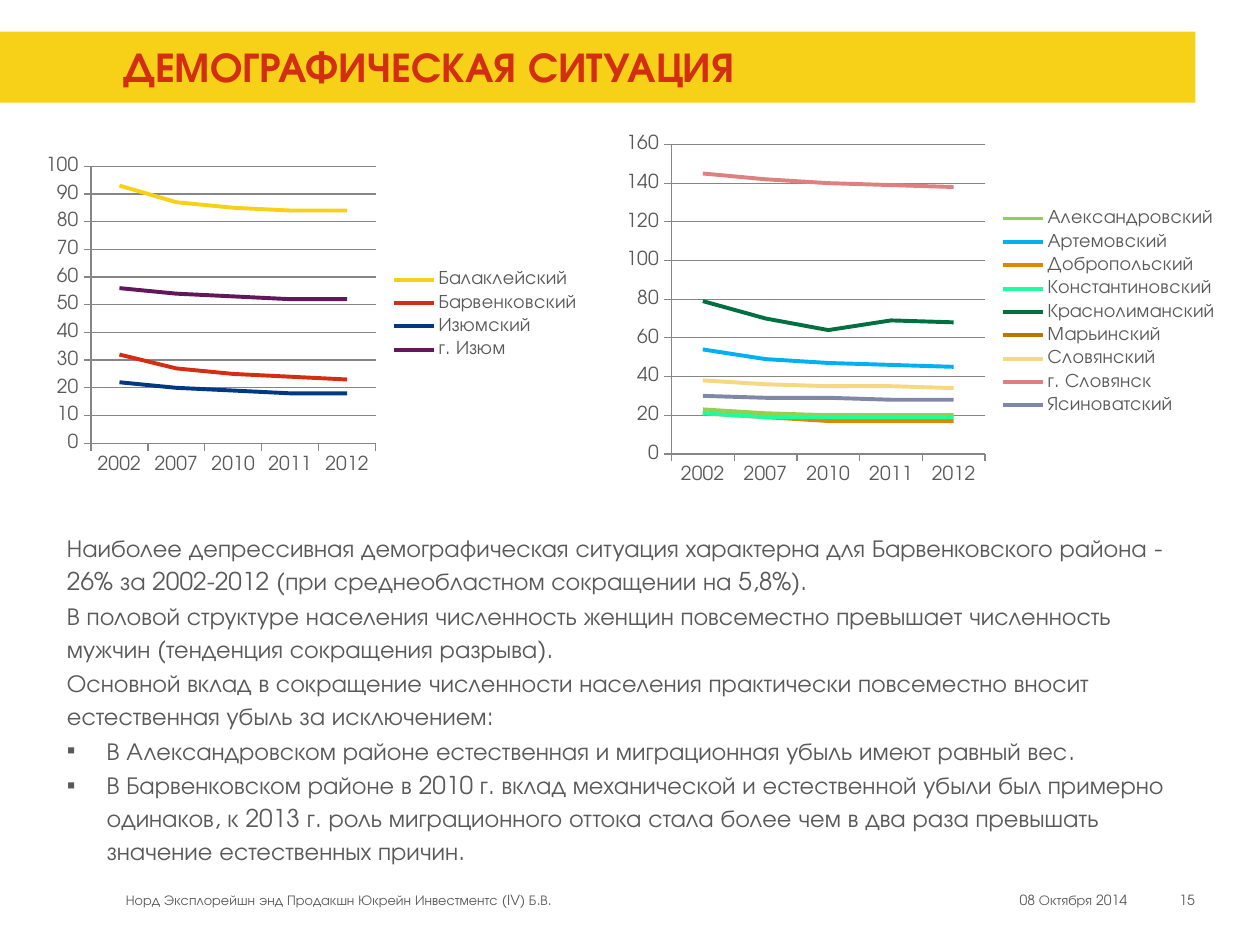
import pptx
import pptx.chart.data
import pptx.dml.color
import pptx.enum.chart
import pptx.enum.shapes
import pptx.enum.text
import pptx.oxml
import pptx.oxml.ns
import pptx.util
from pptx.util import Cm
from dataclasses import dataclass


@dataclass(frozen=True)
class Theme:
    font: str = "TeX Gyre Adventor"
    text: str = "595959"
    title: str = "D42E12"
    band: str = "F7D117"
    grid: str = "868686"
    title_size: int = 24
    body_size: int = 14
    chart_size: int = 11
    footer_size: int = 8
    series_width: float = 2.25
    axis_width: float = 0.75


THEME = Theme()
ALIGN = pptx.enum.text.PP_ALIGN

TITLE = "ДЕМОГРАФИЧЕСКАЯ СИТУАЦИЯ"
PARAGRAPHS = [
    "Наиболее депрессивная демографическая ситуация характерна для Барвенковского района - "
    "26% за 2002-2012 (при среднеобластном сокращении на 5,8%).",
    "В половой структуре населения численность женщин повсеместно превышает численность "
    "мужчин (тенденция сокращения разрыва).",
    "Основной вклад в сокращение численности населения практически повсеместно вносит "
    "естественная убыль за исключением:",
]
BULLETS = [
    "В Александровском районе естественная и миграционная убыль имеют равный вес.",
    "В Барвенковском районе в 2010 г. вклад механической и естественной убыли был примерно "
    "одинаков, к 2013 г. роль миграционного оттока стала более чем в два раза превышать "
    "значение естественных причин.",
]
# text, box in cm, alignment
FOOTERS = [
    ("Норд Эксплорейшн энд Продакшн Юкрейн Инвестментс (IV) Б.В.",
     (2.54, 17.98, 7.01, 0.48), ALIGN.LEFT),
    ("08 Октября 2014", (20.14, 17.98, 3, 0.48), ALIGN.CENTER),
    ("15", (23.34, 17.98, 0.75, 0.48), ALIGN.RIGHT),
]
YEARS = ["2002", "2007", "2010", "2011", "2012"]
# box in cm, plot area as shares of the box, axis maximum and step, series
CHARTS = [
    dict(box=(0.71, 3.02, 11.25, 6.65), plot=(0.1, 0.05, 0.51, 0.84), top=100, step=10, series=[
        ("Балаклейский", "F7D117", (93, 87, 85, 84, 84)),
        ("Барвенковский", "D42E12", (32, 27, 25, 24, 23)),
        ("Изюмский", "003882", (22, 20, 19, 18, 18)),
        ("г. Изюм", "611759", (56, 54, 53, 52, 52)),
    ]),
    dict(box=(12.42, 2.62, 12.4, 7.34), plot=(0.09, 0.04, 0.51, 0.85), top=160, step=20, series=[
        ("Александровский", "92D050", (23, 21, 20, 20, 20)),
        ("Артемовский", "00B0F0", (54, 49, 47, 46, 45)),
        ("Добропольский", "DE8703", (21, 19, 17, 17, 17)),
        ("Константиновский", "1BFF9D", (21, 19, 19, 19, 19)),
        ("Краснолиманский", "007041", (79, 70, 64, 69, 68)),
        ("Марьинский", "C07403", [None] * len(YEARS)),
        ("Словянский", "F6D880", (38, 36, 35, 35, 34)),
        ("г. Словянск", "DF8080", (145, 142, 140, 139, 138)),
        ("Ясиноватский", "8088A8", (30, 29, 29, 28, 28)),
    ]),
]


def rgb(value):
    return pptx.dml.color.RGBColor.from_string(value)


def place(shape, box):
    shape.left, shape.top, shape.width, shape.height = map(Cm, box)


def style_font(font, size, color=THEME.text, bold=False):
    font.name, font.size, font.bold = THEME.font, pptx.util.Pt(size), bold
    font.color.rgb = rgb(color)


def prepare_frame(frame, wrap=True):
    frame.margin_left = frame.margin_top = frame.margin_right = frame.margin_bottom = 0
    frame.vertical_anchor = pptx.enum.text.MSO_ANCHOR.TOP
    frame.word_wrap = wrap
    frame.auto_size = pptx.enum.text.MSO_AUTO_SIZE.NONE


def set_bullet(para, mark=None, indent=0):
    props = para._p.get_or_add_pPr()
    props.set("marL", str(Cm(indent)))
    props.set("indent", str(-Cm(indent)))
    tag = f'a:buChar char="{mark}"' if mark else "a:buNone"
    props.append(pptx.oxml.parse_xml(f"<{tag} {pptx.oxml.ns.nsdecls('a')}/>"))


def style_line(line, color, width):
    line.color.rgb = rgb(color)
    line.width = pptx.util.Pt(width)


def fix_plot_area(chart, shares):
    """Pin the inner plot area to the given shares of the chart box."""
    area = chart._chartSpace.chart.plotArea
    for old in area.findall(pptx.oxml.ns.qn("c:layout")):
        area.remove(old)
    sizes = "".join(f'<c:{key} val="{share}"/>' for key, share in zip("xywh", shares))
    area.insert(0, pptx.oxml.parse_xml(
        f'<c:layout {pptx.oxml.ns.nsdecls("c")}><c:manualLayout><c:layoutTarget val="inner"/>'
        f'<c:xMode val="edge"/><c:yMode val="edge"/>{sizes}</c:manualLayout></c:layout>'))


def add_line_chart(page, box, plot, top, step, series):
    data = pptx.chart.data.CategoryChartData()
    data.categories = YEARS
    for name, _, values in series:
        data.add_series(name, values)
    chart = page.shapes.add_chart(
        pptx.enum.chart.XL_CHART_TYPE.LINE, *map(Cm, box), data).chart
    style_font(chart.font, THEME.chart_size)
    chart.has_title = False
    chart.has_legend = True
    chart.legend.position = pptx.enum.chart.XL_LEGEND_POSITION.RIGHT
    chart.legend.include_in_layout = False
    chart.plots[0].vary_by_categories = False
    for line, (_, color, _) in zip(chart.plots[0].series, series):
        line.smooth = False
        style_line(line.format.line, color, THEME.series_width)
    for axis in (chart.category_axis, chart.value_axis):
        axis.major_tick_mark = pptx.enum.chart.XL_TICK_MARK.OUTSIDE
        style_line(axis.format.line, THEME.grid, THEME.axis_width)
    scale = chart.value_axis
    scale.minimum_scale, scale.maximum_scale, scale.major_unit = 0, top, step
    scale.has_major_gridlines = True
    style_line(scale.major_gridlines.format.line, THEME.grid, THEME.axis_width)
    fix_plot_area(chart, plot)


def main():
    deck = pptx.Presentation()
    deck.slide_width, deck.slide_height = Cm(25.4), Cm(19.05)
    page = deck.slides.add_slide(deck.slide_layouts[1])

    band = page.shapes.add_shape(
        pptx.enum.shapes.MSO_SHAPE.RECTANGLE, *map(Cm, (0, 0.64, 24.1, 1.43)))
    band.shadow.inherit = False
    band.fill.solid()
    band.fill.fore_color.rgb = rgb(THEME.band)
    band.line.fill.background()
    page.shapes._spTree.insert(2, band._element)

    title = page.shapes.title
    place(title, (2.49, 0.81, 21.39, 1.17))
    prepare_frame(title.text_frame)
    title.text_frame.text = TITLE
    heading = title.text_frame.paragraphs[0]
    heading.alignment = ALIGN.LEFT
    style_font(heading.font, THEME.title_size, THEME.title, bold=True)

    for settings in CHARTS:
        add_line_chart(page, **settings)

    body = page.placeholders[1]
    place(body, (1.35, 10.67, 22.17, 6.6))
    prepare_frame(body.text_frame)
    body.text_frame.text = "\n".join(PARAGRAPHS + BULLETS)
    for number, para in enumerate(body.text_frame.paragraphs):
        para.line_spacing = 1.13
        para.space_before, para.space_after = pptx.util.Pt(0), pptx.util.Pt(0.6)
        style_font(para.font, THEME.body_size)
        if number < len(PARAGRAPHS):
            set_bullet(para)
        else:
            set_bullet(para, "▪", 0.8)

    for text, box, alignment in FOOTERS:
        footer = page.shapes.add_textbox(*map(Cm, box))
        prepare_frame(footer.text_frame, wrap=False)
        footer.text_frame.text = text
        para = footer.text_frame.paragraphs[0]
        para.alignment = alignment
        style_font(para.font, THEME.footer_size)

    deck.save("out.pptx")


if __name__ == "__main__":
    main()
